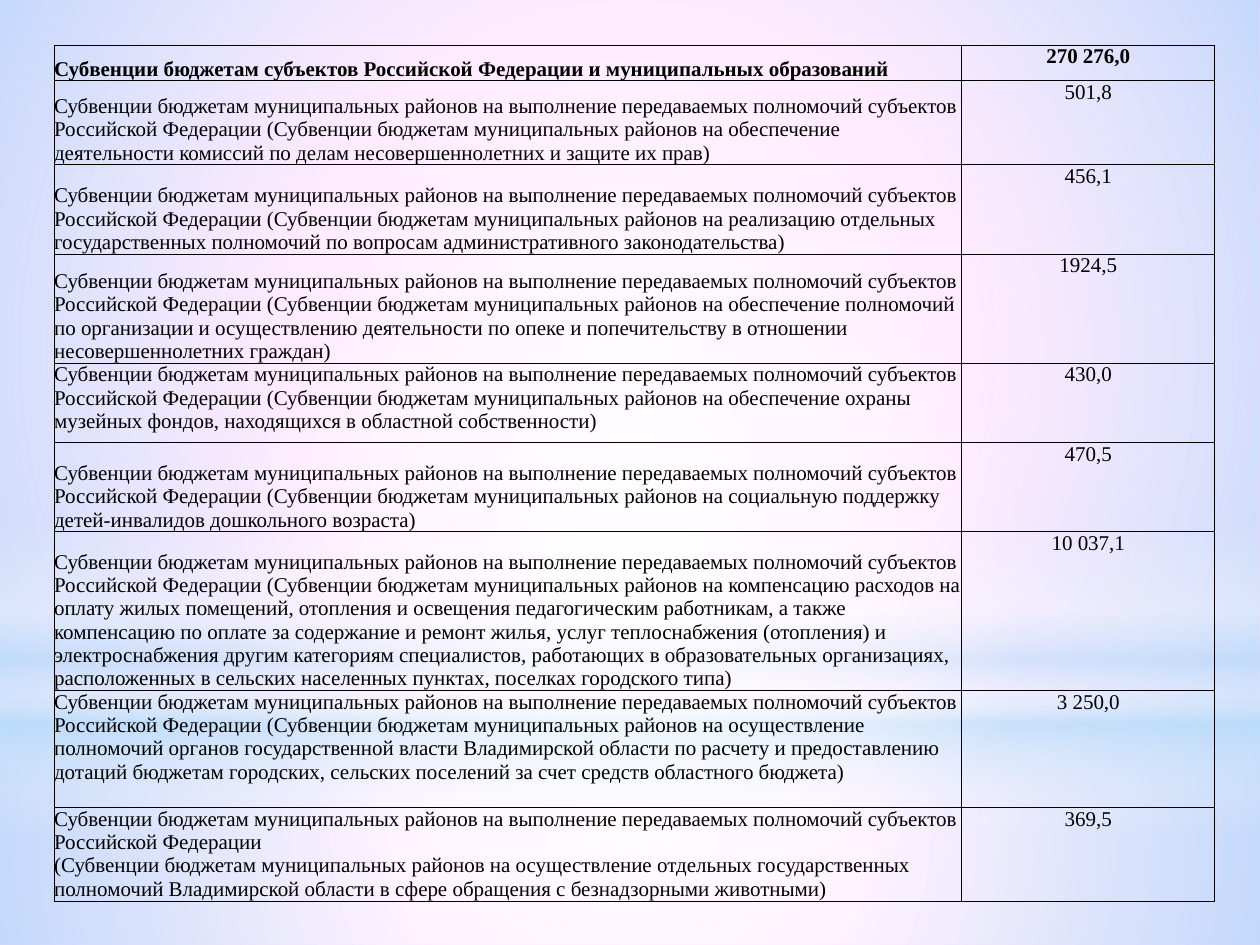
from dataclasses import dataclass

from pptx import Presentation
from pptx.dml.color import RGBColor
from pptx.enum.shapes import MSO_SHAPE
from pptx.enum.text import MSO_ANCHOR, PP_ALIGN
from pptx.oxml import parse_xml
from pptx.oxml.ns import nsdecls, qn
from pptx.util import Cm, Pt


@dataclass(frozen=True)
class Theme:
    font: str = "Times New Roman"
    text_size: float = 12
    border_width: float = 0.5
    text: str = "000000"
    background: str = "FFCCFF"
    light: str = "FFFFFF"
    sky: str = "B4DCFA"


THEME = Theme()
SLIDE_WIDTH, SLIDE_HEIGHT = 25.4, 19.05
COLUMN_WIDTHS = (18.3, 5.1)
COMMON = ("Субвенции бюджетам муниципальных районов на выполнение передаваемых "
          "полномочий субъектов Российской Федерации")
DISTRICTS = "(Субвенции бюджетам муниципальных районов на "
DETAIL = f"{COMMON} {DISTRICTS}"
TOP, BOTTOM = MSO_ANCHOR.TOP, MSO_ANCHOR.BOTTOM

# Description, amount, row height in centimetres, anchor of the description
ROWS = [
    ("Субвенции бюджетам субъектов Российской Федерации и муниципальных образований",
     "270 276,0", 0.72, BOTTOM),
    (DETAIL + "обеспечение деятельности комиссий по делам несовершеннолетних и защите "
     "их прав)", "501,8", 1.69, BOTTOM),
    (DETAIL + "реализацию отдельных государственных полномочий по вопросам "
     "административного законодательства)", "456,1", 1.8, BOTTOM),
    (DETAIL + "обеспечение полномочий по организации и осуществлению деятельности по "
     "опеке и попечительству в отношении несовершеннолетних граждан)",
     "1924,5", 2.2, BOTTOM),
    (DETAIL + "обеспечение охраны музейных фондов, находящихся в областной "
     "собственности)", "430,0", 1.6, TOP),
    (DETAIL + "социальную поддержку детей-инвалидов дошкольного возраста)",
     "470,5", 1.8, BOTTOM),
    (DETAIL + "компенсацию расходов на оплату жилых помещений, отопления и освещения "
     "педагогическим работникам, а также компенсацию по оплате за содержание и ремонт "
     "жилья, услуг теплоснабжения (отопления) и электроснабжения другим категориям "
     "специалистов, работающих в образовательных организациях, расположенных в "
     "сельских населенных пунктах, поселках городского типа)",
     "10 037,1", 3.2, BOTTOM),
    (DETAIL + "осуществление полномочий органов государственной власти Владимирской "
     "области по расчету и предоставлению дотаций бюджетам городских, сельских "
     "поселений за счет средств областного бюджета)", "3 250,0", 2.36, TOP),
    (f"{COMMON}\n{DISTRICTS}осуществление отдельных государственных полномочий "
     "Владимирской области в сфере обращения с безнадзорными животными)",
     "369,5", 1.88, BOTTOM),
]

RADIAL = ('<a:path path="circle">'
          '<a:fillToRect l="50000" t="50000" r="50000" b="50000"/></a:path>')
DOWNWARD = '<a:lin ang="5400000" scaled="0"/>'


def add_glow(slide, preset, left, top, width, height, stops, direction):
    """Place a shape with a translucent gradient; stops are position, colour, opacity."""
    shape = slide.shapes.add_shape(preset, Cm(left), Cm(top), Cm(width), Cm(height))
    shape.shadow.inherit = False
    shape.line.fill.background()
    shape.fill.background()
    stop_xml = "".join(
        f'<a:gs pos="{position * 1000}"><a:srgbClr val="{color}">'
        f'<a:alpha val="{opacity * 1000}"/></a:srgbClr></a:gs>'
        for position, color, opacity in stops)
    gradient = parse_xml(f'<a:gradFill {nsdecls("a")} rotWithShape="1">'
                         f'<a:gsLst>{stop_xml}</a:gsLst>{direction}</a:gradFill>')
    properties = shape.element.spPr
    properties.replace(properties.find(qn("a:noFill")), gradient)


def add_backdrop(slide, left, top, width, height):
    slide.background.fill.solid()
    slide.background.fill.fore_color.rgb = RGBColor.from_string(THEME.background)
    light, sky = THEME.light, THEME.sky
    horizon = 14.17
    add_glow(slide, MSO_SHAPE.RECTANGLE, left, top + horizon, width, height - horizon,
             [(0, light, 91), (37, light, 76), (100, sky, 79)], RADIAL)
    add_glow(slide, MSO_SHAPE.RECTANGLE, left, top, width, horizon,
             [(0, light, 89), (48, light, 62), (100, sky, 79)], RADIAL)
    add_glow(slide, MSO_SHAPE.RECTANGLE, left, top + 10.46, width, 6.35,
             [(0, light, 0), (29, light, 30), (45, sky, 40), (55, light, 26),
              (65, sky, 60), (100, light, 0)], DOWNWARD)
    add_glow(slide, MSO_SHAPE.OVAL, left, top + 4.45, width, horizon,
             [(0, light, 100), (56, light, 0)], RADIAL)


def add_borders(cell):
    properties = cell._tc.get_or_add_tcPr()
    for side in ("lnL", "lnR", "lnT", "lnB"):
        properties.append(parse_xml(
            f'<a:{side} {nsdecls("a")} w="{Pt(THEME.border_width)}"><a:solidFill>'
            f'<a:srgbClr val="{THEME.text}"/></a:solidFill></a:{side}>'))


def fill_cell(cell, text, alignment, anchor, bold):
    add_borders(cell)
    cell.fill.background()
    cell.margin_left = cell.margin_right = cell.margin_top = cell.margin_bottom = 0
    cell.vertical_anchor = anchor
    cell.text_frame.text = text
    for paragraph in cell.text_frame.paragraphs:
        paragraph.alignment = alignment
        for run in paragraph.runs:
            run.font.name = THEME.font
            run.font.size = Pt(THEME.text_size)
            run.font.bold = bold
            run.font.color.rgb = RGBColor.from_string(THEME.text)


def add_subsidy_table(slide, left, top):
    width, height = sum(COLUMN_WIDTHS), sum(row[2] for row in ROWS)
    table = slide.shapes.add_table(len(ROWS), len(COLUMN_WIDTHS), Cm(left), Cm(top),
                                   Cm(width), Cm(height)).table
    table.first_row = table.horz_banding = False
    for column, column_width in zip(table.columns, COLUMN_WIDTHS):
        column.width = Cm(column_width)
    for index, (description, amount, row_height, anchor) in enumerate(ROWS):
        table.rows[index].height = Cm(row_height)
        is_total = index == 0
        fill_cell(table.cell(index, 0), description, PP_ALIGN.LEFT, anchor, is_total)
        fill_cell(table.cell(index, 1), amount, PP_ALIGN.CENTER, TOP, is_total)


def main():
    presentation = Presentation()
    presentation.slide_width = Cm(SLIDE_WIDTH)
    presentation.slide_height = Cm(SLIDE_HEIGHT)
    slide = presentation.slides.add_slide(presentation.slide_layouts[6])
    add_backdrop(slide, 0, 0, SLIDE_WIDTH, SLIDE_HEIGHT)
    add_subsidy_table(slide, 1.09, 0.91)
    presentation.save("out.pptx")


if __name__ == "__main__":
    main()
